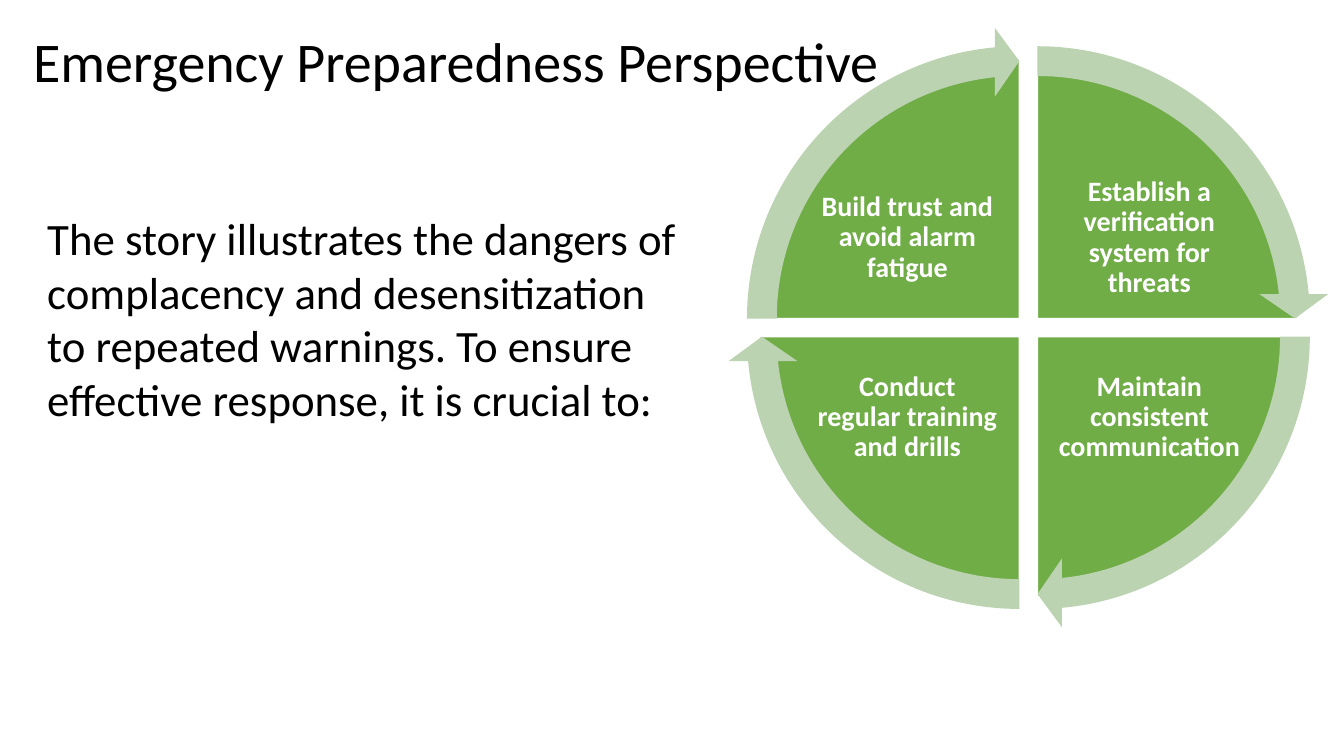
"""Build the emergency preparedness slide with its four-part cycle."""
from pptx import Presentation
from pptx.dml.color import RGBColor
from pptx.enum.shapes import MSO_SHAPE
from pptx.enum.text import MSO_ANCHOR, PP_ALIGN
from pptx.util import Inches, Pt

PIE, ARROW = MSO_SHAPE.PIE, MSO_SHAPE.CIRCULAR_ARROW
TOP, MIDDLE = MSO_ANCHOR.TOP, MSO_ANCHOR.MIDDLE
LEFT, CENTER = PP_ALIGN.LEFT, PP_ALIGN.CENTER

TITLE = "Emergency Preparedness Perspective"
BODY = (
    "The story illustrates the dangers of complacency and desensitization "
    "to repeated warnings. To ensure effective response, it is crucial to:"
)
QUADRANTS = [
    ("Establish a verification system for threats", 1, -1, 270),
    ("Maintain consistent communication", 1, 1, 0),
    ("Conduct regular training and drills", -1, 1, 90),
    ("Build trust and avoid alarm fatigue", -1, -1, 180),
]

THEME = {
    "font": "Calibri",
    "text": RGBColor(0x00, 0x00, 0x00),
    "white": RGBColor(0xFF, 0xFF, 0xFF),
    "pie": RGBColor(0x70, 0xAD, 0x47),
    "arrow": RGBColor(0xBB, 0xD3, 0xB1),
    "title_size": Pt(40),
    "body_size": Pt(32),
    "label_size": Pt(20),
}

CYCLE_X, CYCLE_Y = 10.2, 3.25
HALF_GAP = 0.09
PIE_SIZE, ARROW_SIZE = 5.15, 5.79
LABEL_WIDTH, LABEL_HEIGHT = 1.9, 1.41
LABEL_OFFSET_X, LABEL_OFFSET_Y = 1.2, 0.89
LABEL_INSET = 0.03
ARROW_BAND, ARROW_HEAD = 5.1 / 100, 5.9 / 100
HEAD_ANGLE, ARROW_END_ANGLE = 5.46, 84.54
ANGLE_UNIT = 0.6


def angle_value(degrees):
    """Turn degrees into the scale of a shape adjustment."""
    return degrees % 360 * ANGLE_UNIT


def add_text(slide, text, box, size, color, align=LEFT, anchor=TOP,
             bold=False, inset=None, line_spacing=None):
    """Add one wrapped paragraph of text."""
    frame = slide.shapes.add_textbox(*map(Inches, box)).text_frame
    frame.word_wrap = True
    frame.vertical_anchor = anchor
    if inset is not None:
        for side in ("left", "top", "right", "bottom"):
            setattr(frame, f"margin_{side}", Inches(inset))
    paragraph = frame.paragraphs[0]
    paragraph.alignment = align
    paragraph.line_spacing = line_spacing
    run = paragraph.add_run()
    run.text = text
    for name, value in {"name": THEME["font"], "size": size, "bold": bold}.items():
        setattr(run.font, name, value)
    run.font.color.rgb = color


def add_sector(slide, kind, size, side_x, side_y, adjustments, fill):
    """Add one quarter of the cycle, shifted away from its centre."""
    left = CYCLE_X + side_x * HALF_GAP - size / 2
    top = CYCLE_Y + side_y * HALF_GAP - size / 2
    shape = slide.shapes.add_shape(kind, *map(Inches, (left, top, size, size)))
    for index, value in enumerate(adjustments):
        shape.adjustments[index] = value
    shape.shadow.inherit = False
    shape.fill.solid()
    shape.fill.fore_color.rgb = fill
    return shape


def add_cycle(slide):
    """Draw the sectors with their labels, then the arrows over them."""
    for label, side_x, side_y, start in QUADRANTS:
        angles = angle_value(start), angle_value(start + 90)
        pie = add_sector(slide, PIE, PIE_SIZE, side_x, side_y, angles, THEME["pie"])
        pie.line.color.rgb = THEME["white"]
        pie.line.width = Pt(1)
        box = (
            CYCLE_X + side_x * LABEL_OFFSET_X - LABEL_WIDTH / 2,
            CYCLE_Y + side_y * LABEL_OFFSET_Y - LABEL_HEIGHT / 2,
            LABEL_WIDTH,
            LABEL_HEIGHT,
        )
        add_text(slide, label, box, THEME["label_size"], THEME["white"], CENTER,
                 MIDDLE, True, LABEL_INSET, 0.9)
    for _, side_x, side_y, start in QUADRANTS:
        adjustments = (
            ARROW_BAND,
            angle_value(HEAD_ANGLE),
            angle_value(start + ARROW_END_ANGLE),
            angle_value(start),
            ARROW_HEAD,
        )
        arrow = add_sector(slide, ARROW, ARROW_SIZE, side_x, side_y, adjustments,
                           THEME["arrow"])
        arrow.line.fill.background()


def main():
    """Create and save the presentation."""
    presentation = Presentation()
    presentation.slide_width = Inches(13.33)
    presentation.slide_height = Inches(7.5)
    slide = presentation.slides.add_slide(presentation.slide_layouts[6])
    add_cycle(slide)
    add_text(slide, TITLE, (0.23, 0.21, 10.15, 0.77), THEME["title_size"], THEME["text"])
    add_text(slide, BODY, (0.37, 2.04, 6.45, 2.26), THEME["body_size"], THEME["text"])
    presentation.save("out.pptx")


if __name__ == "__main__":
    main()
